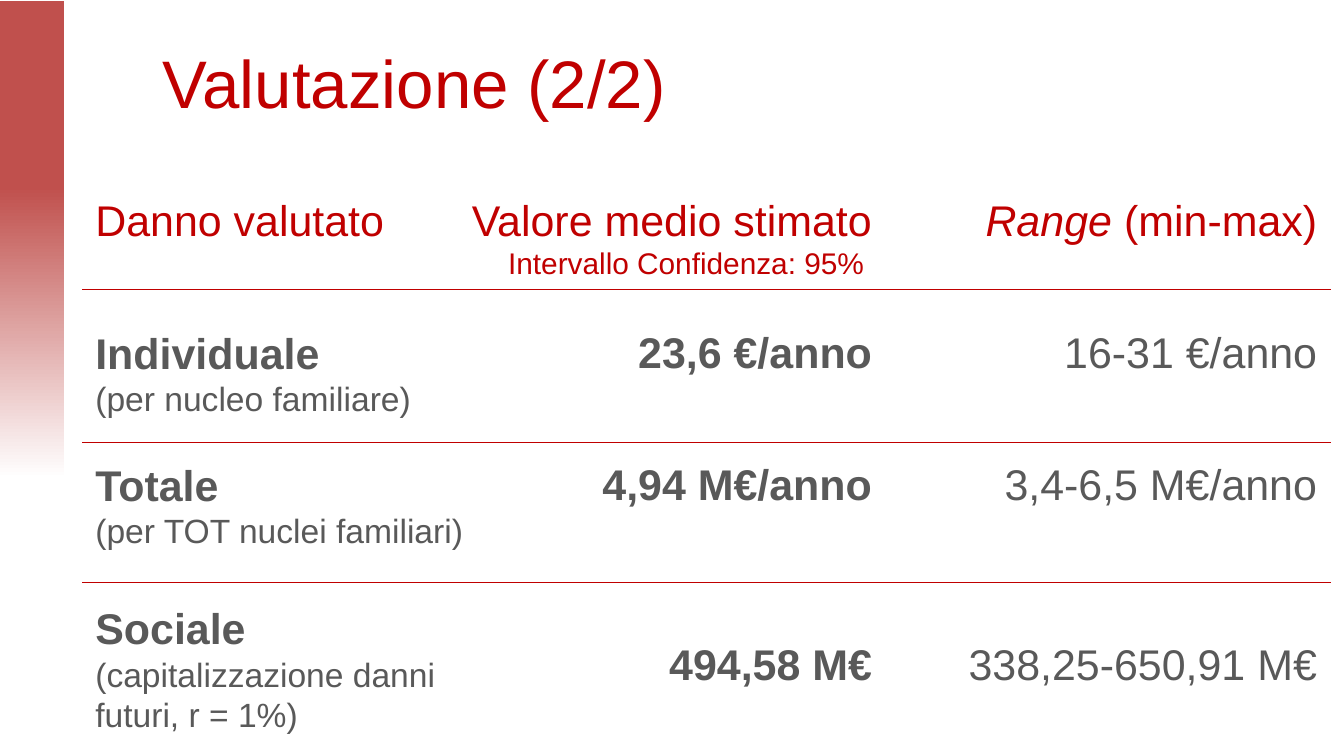
from copy import deepcopy

from lxml import etree
from pptx import Presentation
from pptx.dml.color import RGBColor
from pptx.enum.shapes import MSO_CONNECTOR, MSO_SHAPE
from pptx.enum.text import MSO_ANCHOR, MSO_AUTO_SIZE, PP_ALIGN
from pptx.oxml.ns import qn
from pptx.util import Pt

LEFT, RIGHT = PP_ALIGN.LEFT, PP_ALIGN.RIGHT
MIDDLE = MSO_ANCHOR.MIDDLE
FIT_SHAPE, FIT_NONE = MSO_AUTO_SIZE.SHAPE_TO_FIT_TEXT, MSO_AUTO_SIZE.NONE
RECTANGLE = MSO_SHAPE.RECTANGLE
STRAIGHT = MSO_CONNECTOR.STRAIGHT

RED, GREY, BAR_RED, WHITE = "C00000", "595959", "C0504D", "FFFFFF"
FONT = "Arial"
MAIN_SIZE, NOTE_SIZE = 23, 18

TABLE_LEFT, MEAN_RIGHT, TABLE_RIGHT = 44, 474.5, 713
VALUE_WIDTH, LINE_HEIGHT = 183, 35
HEADER_TOP = 100
RULE_TOPS = (155, 237, 312)

# damage, note, mean value, range, label top, label height, value top, range width
ROWS = [
    ("Individuale", "(per nucleo familiare)",
     "23,6 €/anno", "16-31 €/anno", 171.5, 57, 171, VALUE_WIDTH),
    ("Totale", "(per TOT nuclei familiari)",
     "4,94 M€/anno", "3,4-6,5 M€/anno", 242, 57, 241.5, VALUE_WIDTH),
    ("Sociale", "(capitalizzazione danni futuri, r = 1%)",
     "494,58 M€", "338,25-650,91 M€", 319, 78.5, 338, 202),
]


def rgb(hex_color):
    return RGBColor.from_string(hex_color)


def add_text(paragraph, text, size=MAIN_SIZE, color=GREY, bold=False,
             italic=False, align=LEFT):
    paragraph.alignment = align
    run = paragraph.add_run()
    run.text = text
    font = run.font
    font.name, font.size, font.color.rgb = FONT, Pt(size), rgb(color)
    font.bold, font.italic = bold, italic


def add_frame(slide, left, top, width, height=LINE_HEIGHT):
    box = slide.shapes.add_textbox(Pt(left), Pt(top), Pt(width), Pt(height))
    frame = box.text_frame
    frame.word_wrap = True
    frame.auto_size = FIT_SHAPE
    return frame


def add_value(slide, text, right, top, width=VALUE_WIDTH, **style):
    """Add a one-line cell that ends at the given right edge."""
    frame = add_frame(slide, right - width, top, width)
    add_text(frame.paragraphs[0], text, align=RIGHT, **style)
    return frame


def add_side_bar(slide):
    bar = slide.shapes.add_shape(RECTANGLE, Pt(-111), Pt(111), Pt(256), Pt(34.5))
    bar.rotation = 270
    bar.shadow.inherit = False
    bar.line.fill.background()
    bar.fill.gradient()
    bar.fill.gradient_angle = 180
    start, end = bar.fill.gradient_stops
    start.color.rgb, end.color.rgb = rgb(BAR_RED), rgb(WHITE)
    start.position, end.position = 0, 1
    first_stop = next(bar._element.spPr.iter(qn("a:gs")))
    middle_stop = deepcopy(first_stop)
    middle_stop.set("pos", "39000")
    first_stop.addnext(middle_stop)


def add_title(slide):
    title = slide.shapes.title
    title.left, title.top = Pt(80), Pt(16.5)
    title.width, title.height = Pt(561), Pt(67.5)
    frame = title.text_frame
    frame.auto_size = FIT_NONE
    frame.vertical_anchor = MIDDLE
    frame.margin_bottom = Pt(16.5)
    add_text(frame.paragraphs[0], "Valutazione (2/2)", size=36, color=RED)


def add_header(slide):
    damage = add_frame(slide, TABLE_LEFT, HEADER_TOP, VALUE_WIDTH)
    add_text(damage.paragraphs[0], "Danno valutato", color=RED)
    mean = add_value(slide, "Valore medio stimato", MEAN_RIGHT, HEADER_TOP,
                     width=237, color=RED)
    add_text(mean.add_paragraph(), "Intervallo Confidenza: 95% ", size=16,
             color=RED, align=RIGHT)
    value_range = add_value(slide, "Range", TABLE_RIGHT, HEADER_TOP, width=219,
                            color=RED, italic=True)
    add_text(value_range.paragraphs[0], " (min-max)", color=RED, align=RIGHT)


def add_row(slide, damage, note, mean, value_range, label_top, label_height,
            value_top, range_width):
    label = add_frame(slide, TABLE_LEFT, label_top, 229, label_height)
    add_text(label.paragraphs[0], damage, bold=True)
    add_text(label.add_paragraph(), note, size=NOTE_SIZE)
    add_value(slide, mean, MEAN_RIGHT, value_top, bold=True)
    add_value(slide, value_range, TABLE_RIGHT, value_top, width=range_width)


def add_rule(slide, top):
    rule = slide.shapes.add_connector(
        STRAIGHT, Pt(TABLE_LEFT), Pt(top), Pt(TABLE_RIGHT), Pt(top))
    rule.line.color.rgb = rgb(RED)
    rule.line.width = Pt(0.75)
    etree.SubElement(rule._element.spPr, qn("a:effectLst"))


def main():
    presentation = Presentation()
    presentation.slide_width, presentation.slide_height = Pt(720), Pt(405)
    slide = presentation.slides.add_slide(presentation.slide_layouts[5])
    add_side_bar(slide)
    add_title(slide)
    add_header(slide)
    for row in ROWS:
        add_row(slide, *row)
    for top in RULE_TOPS:
        add_rule(slide, top)
    presentation.save("out.pptx")


if __name__ == "__main__":
    main()
